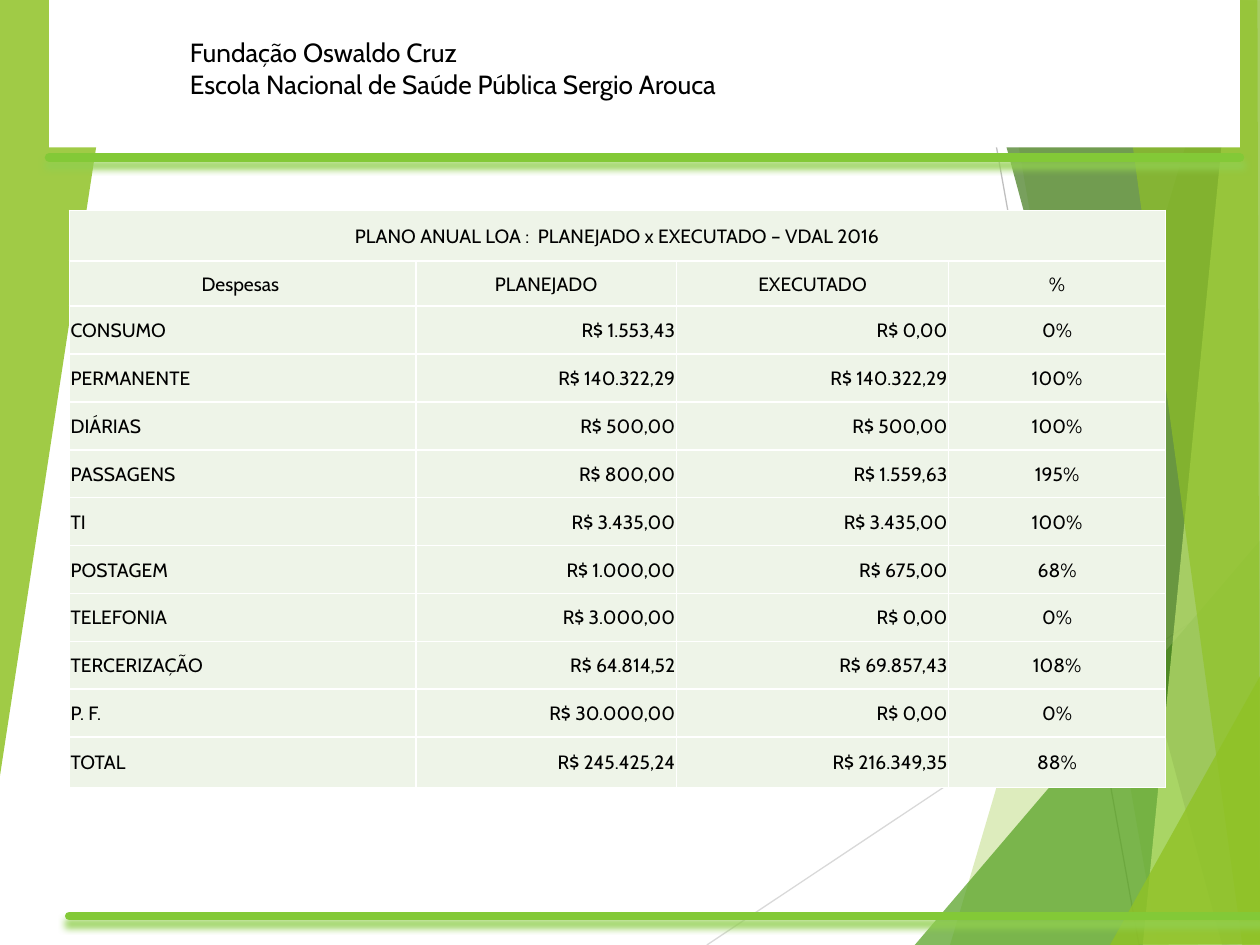
from lxml.etree import SubElement
from pptx import Presentation
from pptx.dml.color import RGBColor
from pptx.enum.shapes import MSO_CONNECTOR, MSO_SHAPE
from pptx.enum.text import MSO_ANCHOR, MSO_AUTO_SIZE, PP_ALIGN
from pptx.oxml.ns import qn
from pptx.util import Inches, Pt

FONT = "Cabin"
BLACK = RGBColor(0x00, 0x00, 0x00)
WHITE = RGBColor(0xFF, 0xFF, 0xFF)
PALE_GRAY = RGBColor(0xD9, 0xD9, 0xD9)
GRAY = RGBColor(0xBF, 0xBF, 0xBF)
LIME = RGBColor(0x90, 0xC2, 0x26)
GREEN = RGBColor(0x54, 0xA0, 0x21)
DARK_GREEN = RGBColor(0x3F, 0x78, 0x19)
LIGHT_LIME = RGBColor(0xC0, 0xE4, 0x74)
BAR_GREEN = RGBColor(0x83, 0xC9, 0x37)
SHADOW_GREEN = RGBColor(0x92, 0xD0, 0x50)
CELL_GREEN = RGBColor(0xEE, 0xF4, 0xE8)

FACETS = [
    ([(9.75, 0), (7.54, 7.5), (10.02, 7.51), (10.01, 0.01)], LIME, 30),
    ([(7.88, -0.01), (9.19, 7.5), (10.01, 7.5), (10.01, -0.01)], LIME, 20),
    ([(7.26, 7.5), (10, 4.29), (10.01, 7.5)], GREEN, 72),
    ([(7.67, -0.01), (9.7, 7.5), (10.01, 7.49), (10.01, -0.01)], DARK_GREEN, 70),
    ([(9.81, -0.01), (9.07, 7.5), (10.01, 7.5), (10, -0.01)], LIGHT_LIME, 70),
    ([(8.83, -0.01), (9.86, 7.5), (10, 7.5), (9.98, -0.01)], LIME, 65),
    ([(8.81, 7.5), (10.01, 5.35), (10.01, 7.49)], LIME, 80),
    ([(-0.01, 0), (0.94, -0.01), (0.94, 0.01), (-0.01, 6.22)], LIME, 85),
]

HEADING = ["Fundação Oswaldo Cruz", "Escola Nacional de Saúde Pública Sergio Arouca"]
TABLE_TITLE = "PLANO ANUAL LOA :  PLANEJADO x EXECUTADO – VDAL 2016"
COLUMN_NAMES = ["Despesas ", "PLANEJADO", "EXECUTADO", "%"]
EXPENSES = [
    ("CONSUMO", "R$ 1.553,43", "R$ 0,00", "0%"),
    ("PERMANENTE", "R$ 140.322,29", "R$ 140.322,29", "100%"),
    ("DIÁRIAS", "R$ 500,00", "R$ 500,00", "100%"),
    ("PASSAGENS", "R$ 800,00", "R$ 1.559,63", "195%"),
    ("TI", "R$ 3.435,00", "R$ 3.435,00", "100%"),
    ("POSTAGEM", "R$ 1.000,00", "R$ 675,00", "68%"),
    ("TELEFONIA", "R$ 3.000,00", "R$ 0,00", "0%"),
    ("TERCERIZAÇÃO", "R$ 64.814,52", "R$ 69.857,43", "108%"),
    ("P. F.", "R$ 30.000,00", "R$ 0,00", "0%"),
    ("TOTAL", "R$ 245.425,24", "R$ 216.349,35", "88%"),
]
COLUMN_WIDTHS = [2.75, 2.07, 2.16, 1.72]
ROW_HEIGHTS = [0.4, 0.36] + [0.38] * 9 + [0.4]
HEADER_ALIGNMENTS = [PP_ALIGN.CENTER] * 4
BODY_ALIGNMENTS = [PP_ALIGN.LEFT, PP_ALIGN.RIGHT, PP_ALIGN.RIGHT, PP_ALIGN.CENTER]


def add_color(parent, color, alpha=None):
    """Append an RGB colour element, with an optional opacity in percent."""
    element = SubElement(parent, qn("a:srgbClr"), val=str(color))
    if alpha is not None:
        SubElement(element, qn("a:alpha"), val=str(alpha * 1000))


def add_line(slide, start, end, color, width):
    """Draw a straight line and return it with its empty effect list."""
    points = [Inches(value) for value in (*start, *end)]
    line = slide.shapes.add_connector(MSO_CONNECTOR.STRAIGHT, *points)
    line.line.color.rgb = color
    line.line.width = Pt(width)
    effects = SubElement(line._element.spPr, qn("a:effectLst"))
    return line, effects


def add_bar(slide, left, right, top):
    """Draw a thick horizontal rule with round ends and a green shadow."""
    bar, effects = add_line(slide, (left, top), (right, top), BAR_GREEN, 5)
    bar.line._get_or_add_ln().set("cap", "rnd")
    shadow = SubElement(effects, qn("a:outerShdw"), blurRad=str(Pt(4)),
                        dist=str(Pt(4)), dir="5400000", rotWithShape="0")
    add_color(shadow, SHADOW_GREEN, 100)


def add_facet(slide, points, color, opacity):
    """Draw one translucent polygon of the background."""
    corners = [(Inches(x), Inches(y)) for x, y in points]
    builder = slide.shapes.build_freeform(*corners[0], scale=1.0)
    builder.add_line_segments(corners[1:], close=True)
    shape = builder.convert_to_shape()
    shape.shadow.inherit = False
    shape.line.fill.background()
    shape.fill.solid()
    shape.fill.fore_color.rgb = color
    rgb = shape._element.spPr.find(qn("a:solidFill")).find(qn("a:srgbClr"))
    SubElement(rgb, qn("a:alpha"), val=str(opacity * 1000))


def add_header_panel(slide):
    """Draw the white panel behind the heading."""
    panel = slide.shapes.add_shape(
        MSO_SHAPE.RECTANGLE, Inches(0.39), Inches(0), Inches(9.45), Inches(1.17))
    panel.shadow.inherit = False
    panel.line.fill.background()
    panel.fill.solid()
    panel.fill.fore_color.rgb = WHITE


def write_paragraph(paragraph, text, size, alignment):
    """Write one run of black text into a paragraph."""
    paragraph.alignment = alignment
    run = paragraph.add_run()
    run.text = text
    run.font.name = FONT
    run.font.size = Pt(size)
    run.font.color.rgb = BLACK


def add_heading(slide):
    """Add the two lines naming the institution."""
    box = slide.shapes.add_textbox(Inches(1.41), Inches(0.24), Inches(5.23), Inches(0.61))
    frame = box.text_frame
    frame.word_wrap = True
    frame.auto_size = MSO_AUTO_SIZE.SHAPE_TO_FIT_TEXT
    for index, text in enumerate(HEADING):
        paragraph = frame.add_paragraph() if index else frame.paragraphs[0]
        write_paragraph(paragraph, text, 15, PP_ALIGN.JUSTIFY)


def style_cell(cell):
    """Give a cell white borders, a pale fill and tight margins."""
    properties = cell._tc.get_or_add_tcPr()
    for side in ("lnL", "lnR", "lnT", "lnB"):
        border = SubElement(properties, qn(f"a:{side}"), w=str(Pt(1)))
        add_color(SubElement(border, qn("a:solidFill")), WHITE)
    cell.fill.solid()
    cell.fill.fore_color.rgb = CELL_GREEN
    cell.vertical_anchor = MSO_ANCHOR.MIDDLE
    cell.margin_left = cell.margin_right = cell.margin_top = Inches(0.01)
    cell.margin_bottom = Inches(0)


def add_expense_table(slide):
    """Add the table of planned and executed expenses."""
    rows = [[TABLE_TITLE], COLUMN_NAMES, *EXPENSES]
    table = slide.shapes.add_table(
        len(rows), len(COLUMN_WIDTHS), Inches(0.55), Inches(1.67),
        Inches(sum(COLUMN_WIDTHS)), Inches(sum(ROW_HEIGHTS))).table
    for column, width in zip(table.columns, COLUMN_WIDTHS):
        column.width = Inches(width)
    for row, height in zip(table.rows, ROW_HEIGHTS):
        row.height = Inches(height)
    for cell in table.iter_cells():
        style_cell(cell)
    table.cell(0, 0).merge(table.cell(0, len(COLUMN_WIDTHS) - 1))
    for row_index, texts in enumerate(rows):
        alignments = HEADER_ALIGNMENTS if row_index < 2 else BODY_ALIGNMENTS
        for column_index, text in enumerate(texts):
            paragraph = table.cell(row_index, column_index).text_frame.paragraphs[0]
            write_paragraph(paragraph, text, 11, alignments[column_index])


def main():
    """Build the slide and save it."""
    presentation = Presentation()
    presentation.slide_width = Inches(10)
    presentation.slide_height = Inches(7.5)
    slide = presentation.slides.add_slide(presentation.slide_layouts[6])
    add_line(slide, (5.61, 7.5), (10.01, 4.57), PALE_GRAY, 0.75)
    add_line(slide, (7.7, 0), (9.04, 7.5), GRAY, 0.75)
    for points, color, opacity in FACETS:
        add_facet(slide, points, color, opacity)
    add_header_panel(slide)
    add_bar(slide, 0.39, 9.84, 1.25)
    add_bar(slide, 0.55, 10, 7.27)
    add_heading(slide)
    add_expense_table(slide)
    presentation.save("out.pptx")


if __name__ == "__main__":
    main()
